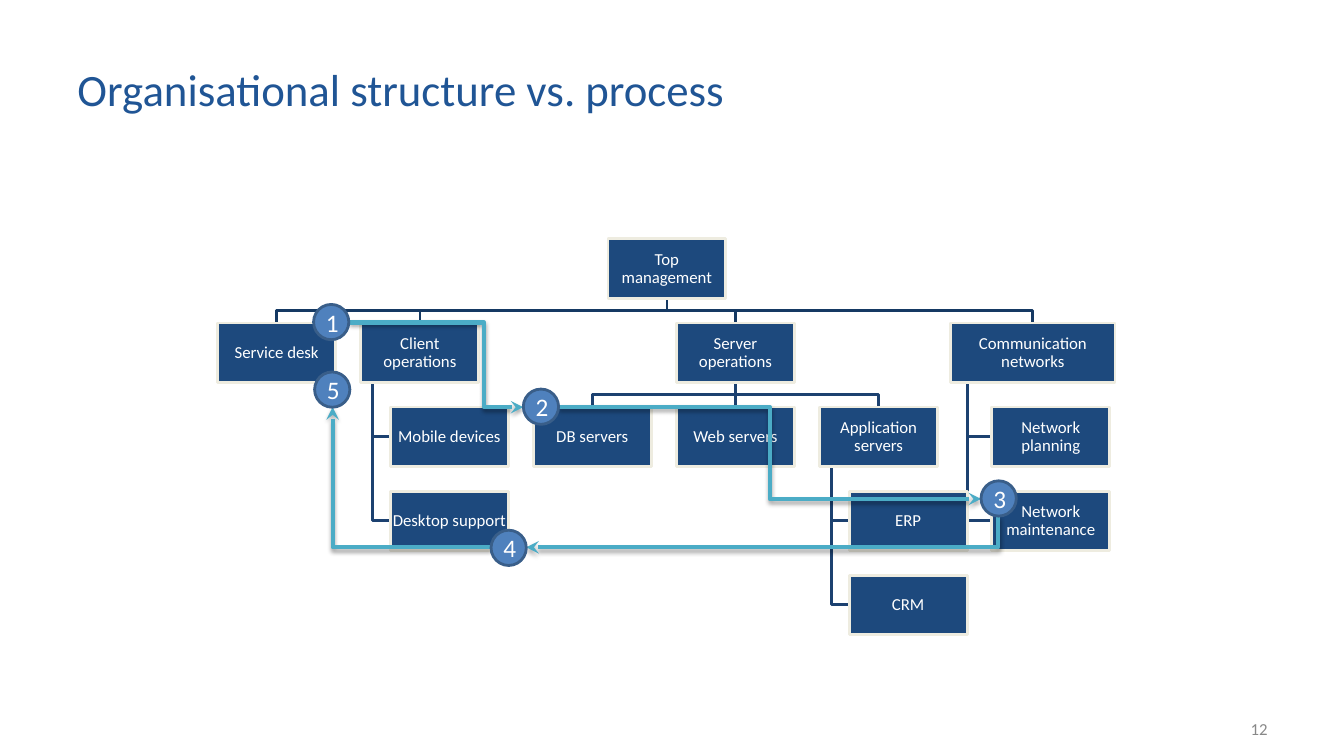
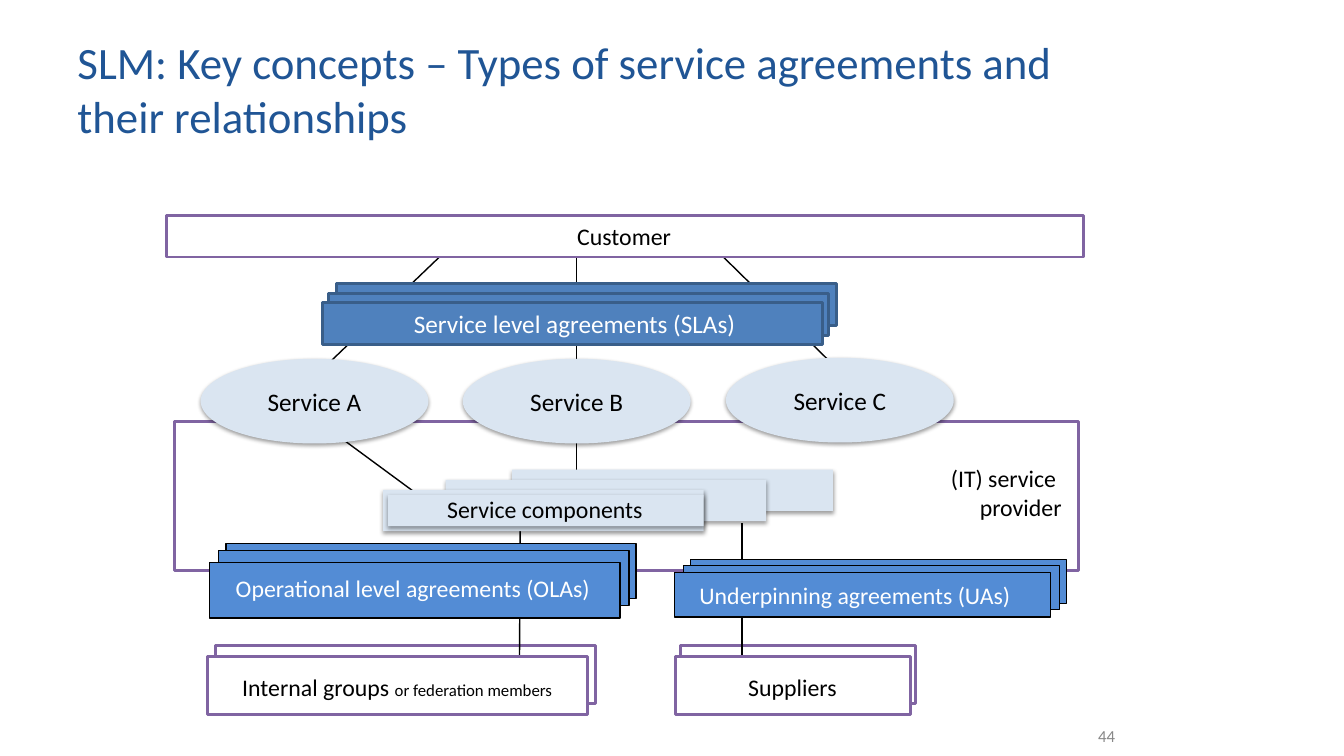
from dataclasses import dataclass

from lxml import etree
from pptx import Presentation
from pptx.dml.color import RGBColor
from pptx.enum import shapes, text
from pptx.oxml import ns

PX = 9144  # 100 px to the inch
PT = 12700
KIND = shapes.MSO_SHAPE
ALIGN = text.PP_ALIGN
ANCHOR = text.MSO_ANCHOR


@dataclass(frozen=True)
class Theme:
    font: str = "Calibri"
    title: str = "205595"
    number: str = "888888"
    white: str = "FFFFFF"
    black: str = "000000"
    navy: str = "1D497D"
    cream: str = "EEECE0"
    trunk: str = "153963"
    branch: str = "1C4170"
    teal: str = "4BACC6"
    blue: str = "4F81BD"
    blue_edge: str = "395E89"
    bright: str = "538CD5"
    pale: str = "DAE5F1"
    purple: str = "8064A2"
    title_size: int = 32
    large: int = 18
    body: int = 17
    small: int = 12


T = Theme()

# Organisation chart: name -> (x, row, width, parent)
ROW_TOP, ROW_PITCH, NODE_W, NODE_H = 237, 83.4, 117, 59
SPREAD = {
    "Top management": (603, 0, NODE_W, None),
    "Service desk": (216, 1, NODE_W, "Top management"),
    "Client operations": (358, 1, NODE_W, "Top management"),
    "Server operations": (671, 1, NODE_W, "Top management"),
    "Communication networks": (943, 1, 163, "Top management"),
    "DB servers": (529, 2, NODE_W, "Server operations"),
    "Web servers": (671, 2, NODE_W, "Server operations"),
    "Application servers": (813, 2, NODE_W, "Server operations"),
}
HANGING = {
    "Client operations": ["Mobile devices", "Desktop support"],
    "Application servers": ["ERP", "CRM"],
    "Communication networks": ["Network planning", "Network maintenance"],
}
STEP_SIZE = 35
STEPS = [(311, 302), (519, 386), (973, 477), (487, 526), (312, 369)]
# start, end, preset, bend position, end that carries the arrowhead
PROCESS = [
    ((347, 320), (519, 404), "bentConnector3", 77500, "tailEnd"),
    ((554, 404), (973, 495), "bentConnector3", 50000, "tailEnd"),
    ((522, 543), (990, 512), "bentConnector2", None, "headEnd"),
    ((487, 543), (330, 404), "bentConnector2", None, "tailEnd"),
]

# Service agreements
PANEL = dict(fill=T.white, line=T.purple, weight=2)
SLA = dict(fill=T.blue, line=T.blue_edge, weight=2)
SUPPORT = dict(fill=T.bright, line=T.black, weight=1)
SERVICE = dict(fill=T.pale, shadow=(38, 1.6))
BACK_PANELS = [(675, 640, 233, 58), (214, 640, 377, 58), (173, 418, 897, 148)]
LINKS = [
    (572, 222, 572, 504), (465, 227, 293, 392), (693, 231, 855, 390),
    (736, 519, 736, 684), (516, 514, 515, 702), (294, 402, 457, 522),
]
# style, size, corners from back to front, label, label format
TOP = dict(anchor=ANCHOR.TOP, color=T.black)
STACKS = [
    (PANEL, (377, 58), [(206, 651)],
     [("Internal groups ", T.body), ("or federation members", T.small)],
     dict(TOP, insets=(4, 16, 5, 0))),
    (PANEL, (233, 58), [(670, 651)], "Suppliers", dict(TOP, insets=(4, 16, 5, 0))),
    (PANEL, (910, 41), [(165, 214)], "Customer",
     dict(color=T.black, insets=(4, 2, 6, 2))),
    (SUPPORT, (407, 55), [(224, 539), (217, 546), (208, 558)],
     "Operational level agreements (OLAs)",
     dict(anchor=ANCHOR.TOP, insets=(4, 11, 8, 0))),
    (SUPPORT, (373, 44), [(685, 555), (678, 561), (669, 568)],
     "Underpinning agreements (UAs)",
     dict(anchor=ANCHOR.TOP, insets=(4, 8, 19, 0))),
    (SERVICE, (318, 41), [(508, 466), (442, 476), (380, 486)], None, {}),
    (SERVICE, (313, 31), [(385, 491)], "Service components",
     dict(TOP, insets=(4, 0, 6, 0))),
    (SLA, (496, 42), [(334, 281), (326, 291), (320, 300)],
     "Service level agreements (SLAs)", dict(size=T.large, insets=(4, 0, 0, 0))),
]
SERVICES = [("Service A", 199, 356), ("Service B", 459, 356), ("Service C", 720, 355)]


def px(*values):
    return [round(v * PX) for v in values]


def rgb(value):
    return RGBColor.from_string(value)


def write(sp, *paras, size=T.body, color=T.white, align=ALIGN.CENTER,
          anchor=ANCHOR.MIDDLE, insets=(0, 0, 0, 0), spacing=None):
    """Fill sp with paragraphs, each a string or a list of (text, size) runs."""
    tf = sp.text_frame
    tf.word_wrap = True
    tf.vertical_anchor = anchor
    tf.margin_left, tf.margin_top, tf.margin_right, tf.margin_bottom = px(*insets)
    for i, para in enumerate(paras):
        p = tf.add_paragraph() if i else tf.paragraphs[0]
        p.alignment = align
        p.line_spacing = spacing
        for words, points in [(para, size)] if isinstance(para, str) else para:
            r = p.add_run()
            r.text = words
            r.font.name, r.font.size = T.font, points * PT
            r.font.color.rgb = rgb(color)


def textbox(slide, at, *paras, **fmt):
    write(slide.shapes.add_textbox(*px(*at)), *paras, **fmt)


def set_effect(sp, shadow=None):
    """Replace the inherited shadow by none, or by (opacity %, distance pt)."""
    props = sp._element.spPr
    effects = props.find(ns.qn("a:effectLst"))
    if effects is None:
        effects = etree.SubElement(props, ns.qn("a:effectLst"))
    if shadow:
        opacity, distance = shadow
        outer = etree.SubElement(
            effects, ns.qn("a:outerShdw"), blurRad=str(round(3.1 * PT)),
            dist=str(round(distance * PT)), dir="5400000", rotWithShape="0")
        clr = etree.SubElement(outer, ns.qn("a:srgbClr"), val=T.black)
        etree.SubElement(clr, ns.qn("a:alpha"), val=str(opacity * 1000))


def stroke(sp, color, weight):
    sp.line.color.rgb = rgb(color)
    sp.line.width = round(weight * PT)


def box(slide, at, kind=KIND.RECTANGLE, fill=T.white, line=None, weight=1, shadow=None):
    sp = slide.shapes.add_shape(kind, *px(*at))
    sp.fill.solid()
    sp.fill.fore_color.rgb = rgb(fill)
    if line:
        stroke(sp, line, weight)
    else:
        sp.line.fill.background()
    sp.shadow.inherit = False
    set_effect(sp, shadow)
    return sp


def polyline(slide, points, color):
    start, *rest = [px(*point) for point in points]
    builder = slide.shapes.build_freeform(*start, scale=1.0)
    builder.add_line_segments(rest, close=False)
    sp = builder.convert_to_shape()
    sp.fill.background()
    stroke(sp, color, 2)
    sp.shadow.inherit = False


def connector(slide, ends, kind=shapes.MSO_CONNECTOR.STRAIGHT,
              color=T.black, weight=1, shadow=None):
    sp = slide.shapes.add_connector(kind, *px(*ends))
    stroke(sp, color, weight)
    set_effect(sp, shadow)
    return sp


def process_arrow(slide, start, end, preset, bend, head):
    sp = connector(slide, start + end, shapes.MSO_CONNECTOR.ELBOW, T.teal, 3, (35, 1.8))
    props = sp._element.spPr
    geom = props.find(ns.qn("a:prstGeom"))
    geom.set("prst", preset)
    if bend:
        guides = geom.find(ns.qn("a:avLst"))
        etree.SubElement(guides, ns.qn("a:gd"), name="adj1", fmla=f"val {bend}")
    etree.SubElement(props.find(ns.qn("a:ln")), ns.qn("a:" + head), type="stealth")


def new_slide(prs, title, number, number_at):
    slide = prs.slides.add_slide(prs.slide_layouts[6])
    insets = (10, 5, 10, 5)
    textbox(slide, (67, 30, 991, 115), title, size=T.title_size, color=T.title,
            align=ALIGN.LEFT, insets=insets)
    textbox(slide, number_at, number, size=T.small, color=T.number,
            align=ALIGN.RIGHT, insets=insets)
    return slide


def row_top(row):
    return ROW_TOP + row * ROW_PITCH


def structure_slide(prs):
    slide = new_slide(prs, "Organisational structure vs. process", "12",
                      (956, 703, 311, 40))
    nodes = [(name, x, row_top(row), w) for name, (x, row, w, _) in SPREAD.items()]
    for boss, names in HANGING.items():
        x, row, w, _ = SPREAD[boss]
        stem, left = x + w / 10, x + w / 4
        for i, name in enumerate(names, row + 1):
            middle = row_top(i) + NODE_H / 2
            polyline(slide, [(stem, row_top(row) + NODE_H), (stem, middle),
                             (left, middle)], T.branch)
            nodes.append((name, left, row_top(i), NODE_W))
    for x, row, w, boss in SPREAD.values():
        if boss:
            boss_x, boss_row, boss_w, _ = SPREAD[boss]
            start, end = boss_x + boss_w / 2, x + w / 2
            bottom, top = row_top(boss_row) + NODE_H, row_top(row)
            bus = (bottom + top) / 2
            path = [(start, bottom), (start, bus), (end, bus), (end, top)]
            polyline(slide, path, T.branch if boss_row else T.trunk)
    for name, x, y, w in nodes:
        sp = box(slide, (x, y, w, NODE_H), fill=T.navy, line=T.cream, weight=2)
        write(sp, name, size=T.small, spacing=0.9, insets=(1, 1, 1, 1))
    for arrow in PROCESS:
        process_arrow(slide, *arrow)
    for i, corner in enumerate(STEPS, 1):
        sp = box(slide, corner + (STEP_SIZE, STEP_SIZE), KIND.FLOWCHART_CONNECTOR, **SLA)
        write(sp, str(i), size=T.large, insets=(7, 4, 7, 4))


def agreements_slide(prs):
    slide = new_slide(
        prs, "SLM: Key concepts – Types of service agreements and their relationships",
        "44", (883, 710, 233, 40))
    for at in BACK_PANELS:
        box(slide, at, **PANEL)
    for ends in LINKS:
        connector(slide, ends)
    for style, size, corners, label, fmt in STACKS:
        for corner in corners:
            sp = box(slide, corner + size, **style)
        if label:
            write(sp, label, **fmt)
    for name, x, y in SERVICES:
        sp = box(slide, (x, y, 226, 84), KIND.OVAL, **SERVICE)
        write(sp, name, size=T.large, color=T.black)
    textbox(slide, (924, 460, 133, 63), "(IT) service ", "provider", color=T.black,
            align=ALIGN.RIGHT, anchor=ANCHOR.TOP, insets=(4, 0, 4, 0))


def main():
    prs = Presentation()
    prs.slide_width, prs.slide_height = px(1333, 750)
    structure_slide(prs)
    agreements_slide(prs)
    prs.save("out.pptx")


if __name__ == "__main__":
    main()
